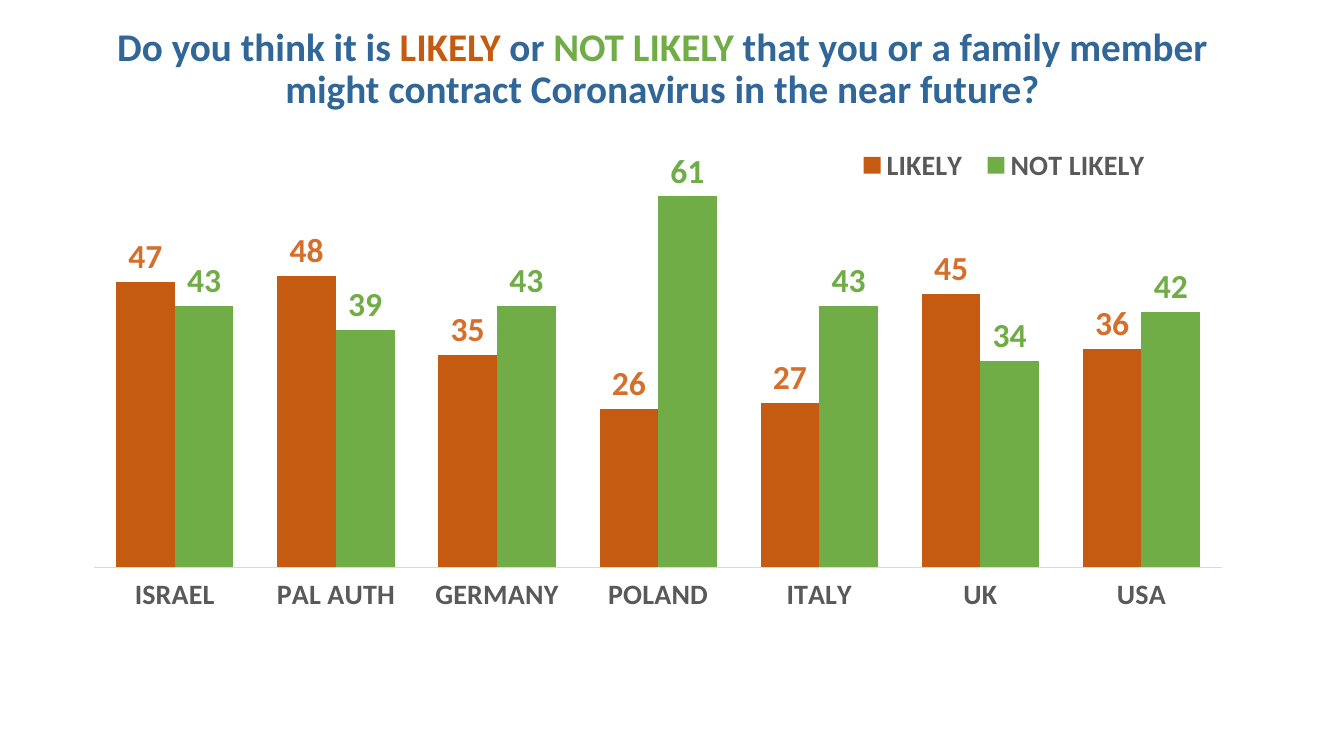
from lxml.etree import SubElement
from pptx import Presentation
from pptx.chart.data import CategoryChartData
from pptx.dml.color import RGBColor
from pptx.enum.chart import XL_CHART_TYPE, XL_LABEL_POSITION, XL_LEGEND_POSITION, XL_TICK_LABEL_POSITION, XL_TICK_MARK
from pptx.enum.text import MSO_ANCHOR, PP_ALIGN
from pptx.oxml.ns import qn
from pptx.util import Pt

BLUE = RGBColor(0x30, 0x66, 0x98)
ORANGE = RGBColor(0xC5, 0x5A, 0x11)
LIGHT_ORANGE = RGBColor(0xD5, 0x70, 0x2C)
GREEN = RGBColor(0x70, 0xAD, 0x47)
GRAY = RGBColor(0x59, 0x59, 0x59)
LIGHT_GRAY = RGBColor(0xD9, 0xD9, 0xD9)


def set_font(font, size, color):
    font.name = "Calibri"
    font.size = Pt(size)
    font.bold = True
    font.color.rgb = color


def set_layout(parent, index, settings):
    for old in parent.findall(qn("c:layout")):
        parent.remove(old)
    layout = SubElement(parent, qn("c:layout"))
    parent.insert(index, layout)
    manual = SubElement(layout, qn("c:manualLayout"))
    for tag, val in settings.items():
        SubElement(manual, qn(f"c:{tag}")).set("val", str(val))


prs = Presentation()
prs.slide_width = Pt(960)
prs.slide_height = Pt(540)
s = prs.slides.add_slide(prs.slide_layouts[6])

title = s.shapes.add_textbox(Pt(51.84), Pt(18), Pt(842.4), Pt(64.08))
tf = title.text_frame
tf.word_wrap = True
tf.vertical_anchor = MSO_ANCHOR.MIDDLE
p = tf.paragraphs[0]
p.alignment = PP_ALIGN.CENTER
p.line_spacing = 0.9
p.font.name = "Calibri"
p.font.size = Pt(28)
p.font.bold = True
for text, color in [
    ("Do you think it is ", BLUE),
    ("LIKELY", ORANGE),
    (" or ", BLUE),
    ("NOT LIKELY ", GREEN),
    ("that you or a family member might contract Coronavirus in the near future?", BLUE),
]:
    r = p.add_run()
    r.text = text
    r.font.color.rgb = color

data = CategoryChartData()
data.categories = ["ISRAEL", "PAL AUTH", "GERMANY", "POLAND", "ITALY", "UK", "USA"]
data.add_series("LIKELY", [47, 48, 35, 26, 27, 45, 36])
data.add_series("NOT LIKELY", [43, 39, 43, 61, 43, 34, 42])
chart = s.shapes.add_chart(
    XL_CHART_TYPE.COLUMN_CLUSTERED, Pt(59.04), Pt(77.04), Pt(828), Pt(390.96), data
).chart
chart.has_title = False
chart.font.name = "Calibri"
chart.font.size = Pt(10)

plot = chart.plots[0]
plot.gap_width = 75
plot.overlap = 0
plot.vary_by_categories = False
for series, fill, label in zip(plot.series, [ORANGE, GREEN], [LIGHT_ORANGE, GREEN]):
    series.format.fill.solid()
    series.format.fill.fore_color.rgb = fill
    series.invert_if_negative = False
    labels = series.data_labels
    labels.show_value = True
    labels.position = XL_LABEL_POSITION.OUTSIDE_END
    set_font(labels.font, 24, label)

countries = chart.category_axis
countries.major_tick_mark = XL_TICK_MARK.NONE
countries.tick_label_position = XL_TICK_LABEL_POSITION.LOW
countries.format.line.color.rgb = LIGHT_GRAY
countries.format.line.width = Pt(0.75)
set_font(countries.tick_labels.font, 20, GRAY)

percents = chart.value_axis
percents.minimum_scale = 0
percents.maximum_scale = 70
percents.has_major_gridlines = False
percents.visible = False

chart.has_legend = True
legend = chart.legend
legend.position = XL_LEGEND_POSITION.BOTTOM
legend.include_in_layout = False
set_font(legend.font, 20, GRAY)

edges = {"xMode": "edge", "yMode": "edge"}
set_layout(chart._chartSpace.chart.plotArea, 0,
           {"layoutTarget": "inner", **edges, "x": 0.01, "y": 0.062, "w": 0.973, "h": 0.778})
set_layout(legend._element, 1, {**edges, "x": 0.66, "y": 0.07, "w": 0.27, "h": 0.07})

prs.save("out.pptx")
